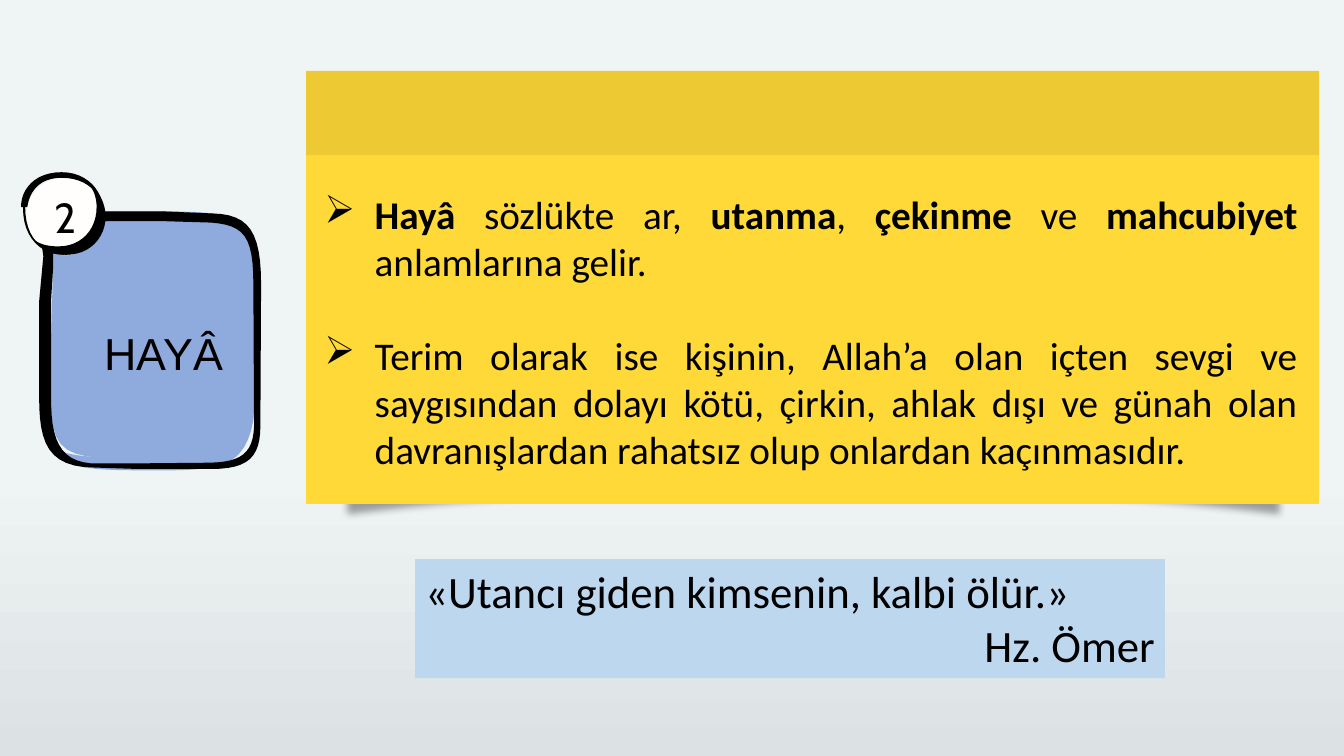
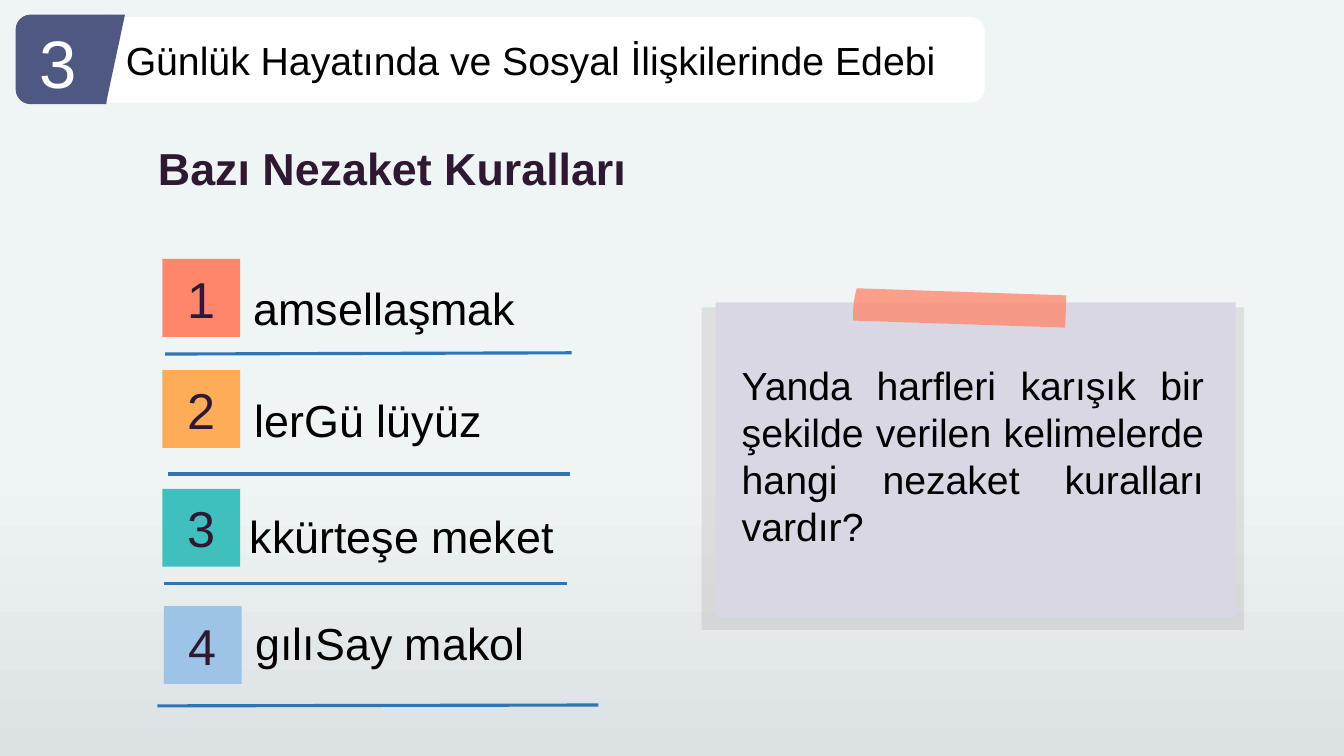
from lxml import etree
from pptx import Presentation
from pptx.dml.color import RGBColor
from pptx.enum.shapes import MSO_CONNECTOR, MSO_SHAPE
from pptx.enum.text import MSO_ANCHOR, PP_ALIGN
from pptx.oxml.ns import qn
from pptx.util import Pt

RECTANGLE, OVAL = MSO_SHAPE.RECTANGLE, MSO_SHAPE.OVAL
ROUND_TOP, TRIANGLE = MSO_SHAPE.ROUND_2_SAME_RECTANGLE, MSO_SHAPE.RIGHT_TRIANGLE
STRAIGHT = MSO_CONNECTOR.STRAIGHT
TOP, MIDDLE = MSO_ANCHOR.TOP, MSO_ANCHOR.MIDDLE
LEFT, CENTER, RIGHT, JUSTIFY = PP_ALIGN.LEFT, PP_ALIGN.CENTER, PP_ALIGN.RIGHT, PP_ALIGN.JUSTIFY

COLORS = {
    "sky": "EFF4F5", "mist": "DCE1E4", "black": "000000", "white": "FFFFFF",
    "paper": "FFFEFD", "periwinkle": "8FAADC", "yellow": "FFD938", "gray": "BEBEBE",
    "pale blue": "BDD7EE", "navy": "4F5881", "plum": "2F1932", "coral": "FF866A",
    "orange": "FFAC58", "teal": "40BFBF", "blue": "9DC3E6", "rule": "2E75B6",
    "lavender": "DAD7E5", "taupe": "918C7F",
}
STEPS = 12
BULLET_INDENT = 36


def color(name):
    return RGBColor.from_string(COLORS[name])


def trace(start, *segments):
    """Points along a contour; a segment is a line end (2 numbers) or a Bezier curve (6)."""
    points = [start]
    for segment in segments:
        if len(segment) == 2:
            points.append(segment)
            continue
        x0, y0 = points[-1]
        x1, y1, x2, y2, x3, y3 = segment
        for step in range(1, STEPS + 1):
            t = step / STEPS
            a, b, c, d = (1 - t) ** 3, 3 * t * (1 - t) ** 2, 3 * t * t * (1 - t), t ** 3
            points.append((a * x0 + b * x1 + c * x2 + d * x3,
                           a * y0 + b * y1 + c * y2 + d * y3))
    return points


class Deck:
    def __init__(self):
        self.deck = Presentation()
        self.deck.slide_width, self.deck.slide_height = Pt(960), Pt(540)
        self.page = None
        fill = self.deck.slide_master.background.fill
        fill.gradient()
        fill.gradient_angle = 270
        for stop, name, position in zip(fill.gradient_stops, ("sky", "mist"), (0.62, 1)):
            stop.color.rgb = color(name)
            stop.position = position

    def new_page(self):
        self.page = self.deck.slides.add_slide(self.deck.slide_layouts[6])

    def paint(self, shape, fill, opacity=100):
        shape.shadow.inherit = False
        shape.fill.solid()
        shape.fill.fore_color.rgb = color(fill)
        shape.line.fill.background()
        if opacity < 100:
            tint = shape._element.spPr.find(".//" + qn("a:srgbClr"))
            etree.SubElement(tint, qn("a:alpha"), val=str(opacity * 1000))
        return shape

    def block(self, place, fill, kind=RECTANGLE, opacity=100):
        shape = self.page.shapes.add_shape(kind, *map(Pt, place))
        return self.paint(shape, fill, opacity)

    def turned(self, place, fill, kind, rotation):
        """A shape turned by a quarter, so that it covers the given place."""
        left, top, width, height = place
        shift = (width - height) / 2
        shape = self.block((left + shift, top - shift, height, width), fill, kind)
        shape.rotation = rotation

    def outline(self, fill, *contours, opacity=100):
        """A freeform; a second contour cuts a hole."""
        scaled = [[(Pt(x), Pt(y)) for x, y in contour] for contour in contours]
        builder = self.page.shapes.build_freeform(*scaled[0][0])
        for index, contour in enumerate(scaled):
            if index:
                builder.move_to(*contour[0])
            builder.add_line_segments(contour[1:], close=True)
        return self.paint(builder.convert_to_shape(), fill, opacity)

    def drop_shadow(self, shape, blur, distance, opacity):
        effects = shape._element.spPr.find(qn("a:effectLst"))
        shadow = etree.SubElement(effects, qn("a:outerShdw"), blurRad=str(Pt(blur)),
                                  dist=str(Pt(distance)), dir="5400000", rotWithShape="0")
        tint = etree.SubElement(shadow, qn("a:srgbClr"), val=COLORS["black"])
        etree.SubElement(tint, qn("a:alpha"), val=str(opacity * 1000))

    def rule(self, start, end):
        line = self.page.shapes.add_connector(STRAIGHT, *map(Pt, start + end))
        line.line.color.rgb = color("rule")
        line.line.width = Pt(2.25)
        etree.SubElement(line._element.spPr, qn("a:effectLst"))

    def fill_text(self, box, lines, size, font="Arial", ink="black", align=LEFT,
                  anchor=TOP, inset=(7.2, 3.6), wrap=True):
        """Fill a shape with paragraphs; parts between asterisks are bold."""
        frame = box.text_frame
        frame.word_wrap = wrap
        frame.vertical_anchor = anchor
        frame.margin_left = frame.margin_right = Pt(inset[0])
        frame.margin_top = frame.margin_bottom = Pt(inset[1])
        for index, line in enumerate(lines):
            paragraph = frame.add_paragraph() if index else frame.paragraphs[0]
            paragraph.alignment = align
            for part, words in enumerate(line.split("*")):
                if words:
                    span = paragraph.add_run()
                    span.text = words
                    span.font.name, span.font.size = font, Pt(size)
                    span.font.bold = part % 2 == 1
                    span.font.color.rgb = color(ink)
        return frame.paragraphs

    def text(self, place, lines, size, **style):
        box = self.page.shapes.add_textbox(*map(Pt, place))
        return self.fill_text(box, lines, size, **style)

    def bullet(self, paragraph):
        properties = paragraph._p.get_or_add_pPr()
        properties.set("marL", str(Pt(BULLET_INDENT)))
        properties.set("indent", str(-Pt(BULLET_INDENT)))
        etree.SubElement(properties, qn("a:buChar"), char="➢")


def draw_card(deck):
    """Hand-drawn card with its round number badge."""
    deck.outline("periwinkle", trace(
        (111, 151), (89, 151), (45, 151, 38, 153, 38, 174), (38, 181),
        (38, 193, 36, 251, 36, 273), (36, 328, 41, 328, 116, 328),
        (185, 328, 179, 294, 179, 218), (179, 154, 183, 151, 111, 151)))
    deck.outline("periwinkle", trace(
        (172, 163), (176, 174, 175, 189, 175, 216), (175, 292, 181, 327, 109, 327),
        (71, 327, 50, 327, 39, 320), (46, 336, 66, 336, 117, 336),
        (145, 336, 162, 334, 171, 324), (186, 307, 183, 273, 183, 225),
        (183, 188, 184, 171, 172, 163)))
    deck.outline(
        "black",
        trace((82, 151), (45, 151, 30, 153, 30, 176), (31, 183), (28, 215), (28, 284),
              (28, 316, 34, 334, 68, 334), (99, 335), (151, 335),
              (178, 335, 186, 326, 186, 304), (186.5, 203),
              (186.5, 166, 178, 153, 152, 152.5), (117, 151)),
        trace((82, 158), (117, 158), (151, 159), (174, 161, 181, 168, 181, 203), (181.5, 304),
              (181, 324, 172, 330, 150, 330.5), (99, 331), (65, 331),
              (42, 329, 36.5, 313, 36.5, 284), (36.5, 215), (38, 191), (38, 182),
              (38, 161, 45, 158, 82, 158)))
    badge = deck.block((18.7, 126.7, 56.3, 55.6), "paper", OVAL)
    deck.fill_text(badge, ["2"], 30, font="Cabin", align=CENTER, anchor=MIDDLE, inset=(0, 0))
    deck.outline("black", trace(
        (64, 132), (67.5, 137, 69, 142, 69, 148), (69, 164, 58, 176, 42, 176),
        (35, 176, 29, 175, 24, 171), (29, 179, 38, 182, 47.5, 182),
        (64, 182, 75.5, 170, 75.5, 154), (75, 145, 71, 137, 64, 132)))
    deck.outline(
        "black",
        trace((44, 123), (25, 123, 15, 135, 15, 148), (16.5, 148),
              (16, 170, 30, 182, 45, 182), (63, 182, 74, 170, 74, 152),
              (74, 136, 62, 123, 44, 123)),
        trace((44, 127), (28, 127, 21, 137, 19.5, 148), (18, 148),
              (18, 170, 30, 180, 43, 180), (62, 180, 73, 168, 73, 152),
              (73, 138, 62, 127, 44, 127)))
    caption, = deck.text((43.9, 213.8, 146.2, 51.1), ["HAYÂ"], 32, align=CENTER, inset=(0, 0))
    caption.line_spacing = 1.5


def modesty_page(deck):
    deck.new_page()
    draw_card(deck)
    curl = deck.outline("gray", trace(
        (248.4, 322.6), (913, 322.6), (913, 360), (906.5, 359.3),
        (823, 348.5, 707.8, 341.3, 580.7, 341.3), (453.6, 341.3, 338.4, 348.5, 254.9, 359.3),
        (248.4, 360)))
    deck.drop_shadow(curl, blur=5, distance=7, opacity=34)
    deck.block((218.6, 50.6, 723.6, 309.4), "yellow")
    deck.block((218.6, 50.6, 723.6, 60.3), "black", opacity=7)
    meanings = deck.text((224.6, 132.5, 709.2, 211), [
        "*Hayâ* sözlükte ar, *utanma*, *çekinme* ve *mahcubiyet *anlamlarına gelir. ",
        "Terim olarak ise kişinin, Allah’a olan içten sevgi ve saygısından dolayı kötü, "
        "çirkin, ahlak dışı ve günah olan davranışlardan rahatsız olup onlardan kaçınmasıdır.",
    ], 28, font="Calibri", align=JUSTIFY)
    meanings[1].space_before = Pt(33.6)
    for paragraph in meanings:
        deck.bullet(paragraph)
    quote = deck.block((296.6, 399.4, 535.5, 85), "pale blue")
    lines = deck.fill_text(quote, ["«Utancı giden kimsenin, kalbi ölür.»", "Hz. Ömer"], 32,
                           font="Calibri")
    lines[1].alignment = RIGHT


def courtesy_page(deck):
    deck.new_page()
    deck.turned((54.7, 12.2, 648.7, 61.2), "white", ROUND_TOP, 90)
    deck.turned((11.2, 10.4, 64.8, 64), "navy", ROUND_TOP, 270)
    deck.turned((75.6, 10.4, 13.7, 64), "navy", TRIANGLE, 90)
    deck.text((82.8, 22.3, 599.8, 41), ["Günlük Hayatında ve Sosyal İlişkilerinde Edebi"],
              28, wrap=False)
    deck.text((28.1, 15.1, 40.3, 58.3), ["3"], 48, ink="white", inset=(0, 0))

    deck.block((501.1, 219.6, 387.4, 230.4), "taupe", opacity=19)
    deck.block((511.2, 216, 371.5, 224.6), "lavender")
    deck.outline("coral", trace(
        (612, 205.9), (610, 213, 609, 221, 609.5, 229), (761, 234),
        (761, 224, 762, 217, 761.5, 211)), opacity=77)
    deck.text((522.7, 254.2, 344.2, 145.4), [
        "Yanda harfleri karışık bir şekilde verilen kelimelerde hangi nezaket kuralları vardır?",
    ], 28, align=JUSTIFY)

    deck.text((105.8, 91.4, 419.8, 56.9), ["*Bazı Nezaket Kuralları*"], 32, ink="plum",
              anchor=MIDDLE, inset=(7.2, 7.2))
    rows = [  # fill, word, square corner, word corner, rule start, rule end
        ("coral", "amsellaşmak", (116, 185), (174.2, 196.6), (118, 252.9), (408.4, 252)),
        ("orange", "lerGü lüyüz", (116, 264.3), (175, 277.2), (120, 338.6), (407.5, 338.6)),
        ("teal", "kkürteşe meket", (116, 349.2), (171.4, 360), (117.4, 416.6), (405.2, 416.6)),
        ("blue", "gılıSay makol", (117, 432.9), (175.5, 436.3), (112.4, 504.2), (427.5, 503.6)),
    ]
    for number, (fill, word, square, place, start, end) in enumerate(rows, 1):
        box = deck.block((*square, 55.6, 55.6), fill)
        deck.fill_text(box, [str(number)], 36, ink="plum", align=CENTER, anchor=MIDDLE,
                       inset=(7.2, 7.2))
        deck.text((*place, 252, 46), [word], 32)
        deck.rule(start, end)


def main():
    deck = Deck()
    modesty_page(deck)
    courtesy_page(deck)
    deck.deck.save("out.pptx")


if __name__ == "__main__":
    main()
